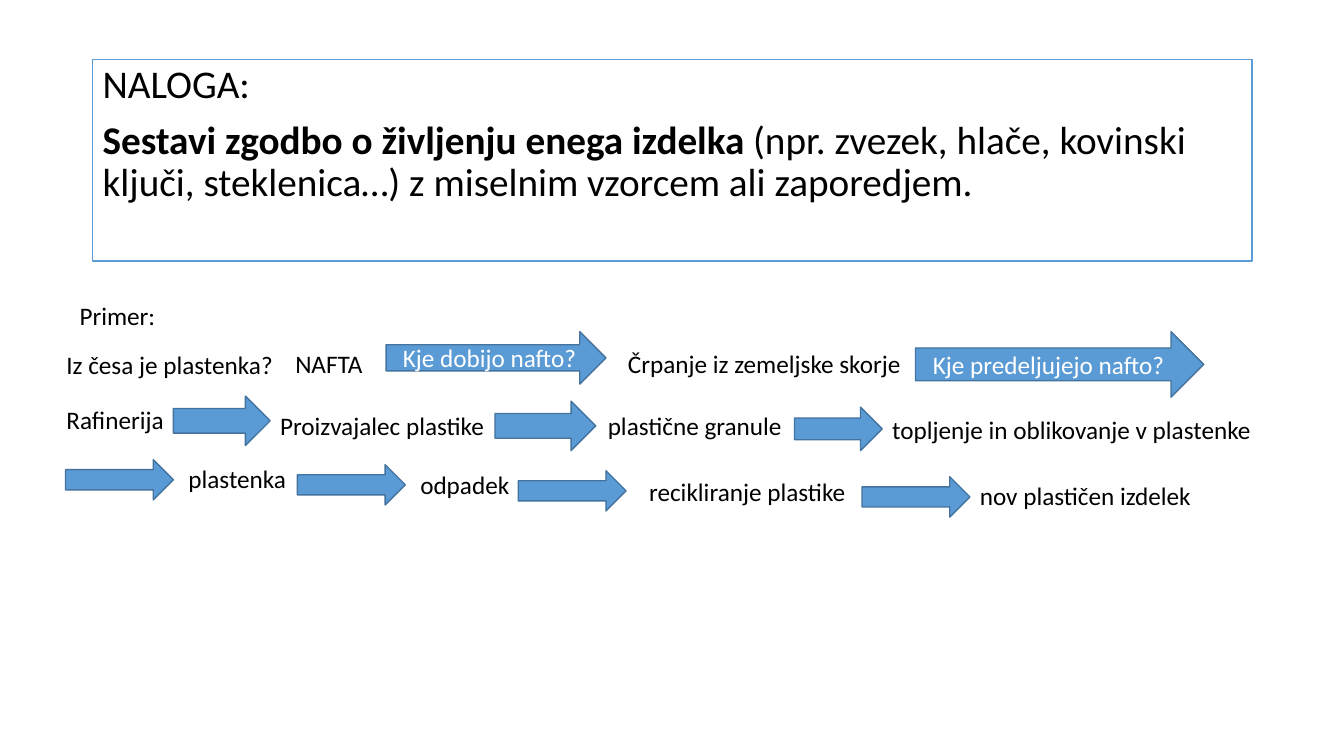
from pptx import Presentation
from pptx.dml.color import RGBColor
from pptx.enum.shapes import MSO_SHAPE
from pptx.enum.text import MSO_ANCHOR, PP_ALIGN
from pptx.util import Inches, Pt

RECT = MSO_SHAPE.RECTANGLE
ARROW = MSO_SHAPE.RIGHT_ARROW
TOP = MSO_ANCHOR.TOP
MIDDLE = MSO_ANCHOR.MIDDLE
LEFT = PP_ALIGN.LEFT
CENTER = PP_ALIGN.CENTER

FONT = "Calibri"
BLACK, WHITE = "000000", "FFFFFF"
BLUE, EDGE = "5B9BD5", "43739E"
COLS, ROWS = 13.33, 7.5
LABEL_H = 0.4
STEP_W, STEP_H = 1.07, 0.4

LABELS = [
    ("Primer:", 0.69, 2.93, 1.15),
    ("Iz česa je plastenka?", 0.56, 3.42, 2.41),
    ("NAFTA", 2.83, 3.41, 0.89),
    ("Črpanje iz zemeljske skorje", 6.13, 3.41, 2.96),
    ("Rafinerija", 0.56, 3.96, 1.31),
    ("Proizvajalec plastike", 2.68, 4.02, 2.3),
    ("plastične granule", 5.93, 4.02, 2.03),
    ("topljenje in oblikovanje v plastenke", 8.75, 4.06, 3.99),
    ("plastenka", 1.77, 4.55, 1.18),
    ("odpadek", 4.07, 4.61, 1.1),
    ("recikliranje plastike", 6.34, 4.68, 2.23),
]
ARROWS = [
    ("Kje dobijo nafto?", 3.83, 3.29, 2.18, 0.52),
    ("Kje predeljujejo nafto? ", 9.08, 3.29, 2.86, 0.65),
    ("", 1.72, 3.93, 0.96, 0.49),
    ("", 4.91, 3.98, 1, 0.49),
    ("", 7.88, 4.04, 0.87, 0.43),
]
STEPS = [(0.65, 4.56), (2.95, 4.61), (5.14, 4.67), (8.55, 4.73)]


def color(code):
    return RGBColor.from_string(code)


def grid(*cells):
    return [Inches(cell) for cell in cells]


def style(para, size, ink, align=LEFT):
    para.alignment = align
    for run in para.runs:
        run.font.name = FONT
        run.font.size = Pt(size)
        run.font.color.rgb = color(ink)


def add_box(slide, kind, area, fill, line):
    box = slide.shapes.add_shape(kind, *grid(*area))
    box.shadow.inherit = False
    box.fill.solid()
    box.fill.fore_color.rgb = color(fill)
    box.line.color.rgb = color(line)
    box.line.width = Pt(1)
    box.text_frame.word_wrap = True
    return box


def add_task(slide):
    frame = add_box(slide, RECT, (0.92, 0.59, 11.5, 2), WHITE, BLUE).text_frame
    frame.vertical_anchor = TOP
    head = frame.paragraphs[0]
    head.text = "NALOGA:"
    body = frame.add_paragraph()
    body.text = "Sestavi zgodbo o življenju enega izdelka"
    body.runs[0].font.bold = True
    rest = body.add_run()
    rest.text = (" (npr. zvezek, hlače, kovinski ključi, steklenica…)"
                 " z miselnim vzorcem ali zaporedjem.")
    for para in (head, body):
        para.line_spacing = 0.9
        para.space_before = Pt(10)
        style(para, 28, BLACK)


def add_label(slide, text, left, top, width, height=LABEL_H):
    box = slide.shapes.add_textbox(*grid(left, top, width, height))
    frame = box.text_frame
    frame.word_wrap = True
    frame.text = text
    style(frame.paragraphs[0], 18, BLACK)
    return frame.paragraphs[0]


def add_arrow(slide, text, *area):
    frame = add_box(slide, ARROW, area, BLUE, EDGE).text_frame
    frame.vertical_anchor = MIDDLE
    frame.text = text
    style(frame.paragraphs[0], 18, WHITE, CENTER)


def main():
    deck = Presentation()
    deck.slide_width, deck.slide_height = grid(COLS, ROWS)
    slide = deck.slides.add_slide(deck.slide_layouts[6])
    add_task(slide)
    for label in LABELS:
        add_label(slide, *label)
    last = add_label(slide, "nov plastičen izdelek", 9.62, 4.7, 2.34, 0.43)
    last.line_spacing = 1.07
    last.space_after = Pt(8)
    for arrow in ARROWS:
        add_arrow(slide, *arrow)
    for left, top in STEPS:
        add_arrow(slide, "", left, top, STEP_W, STEP_H)
    deck.save("out.pptx")


if __name__ == "__main__":
    main()
